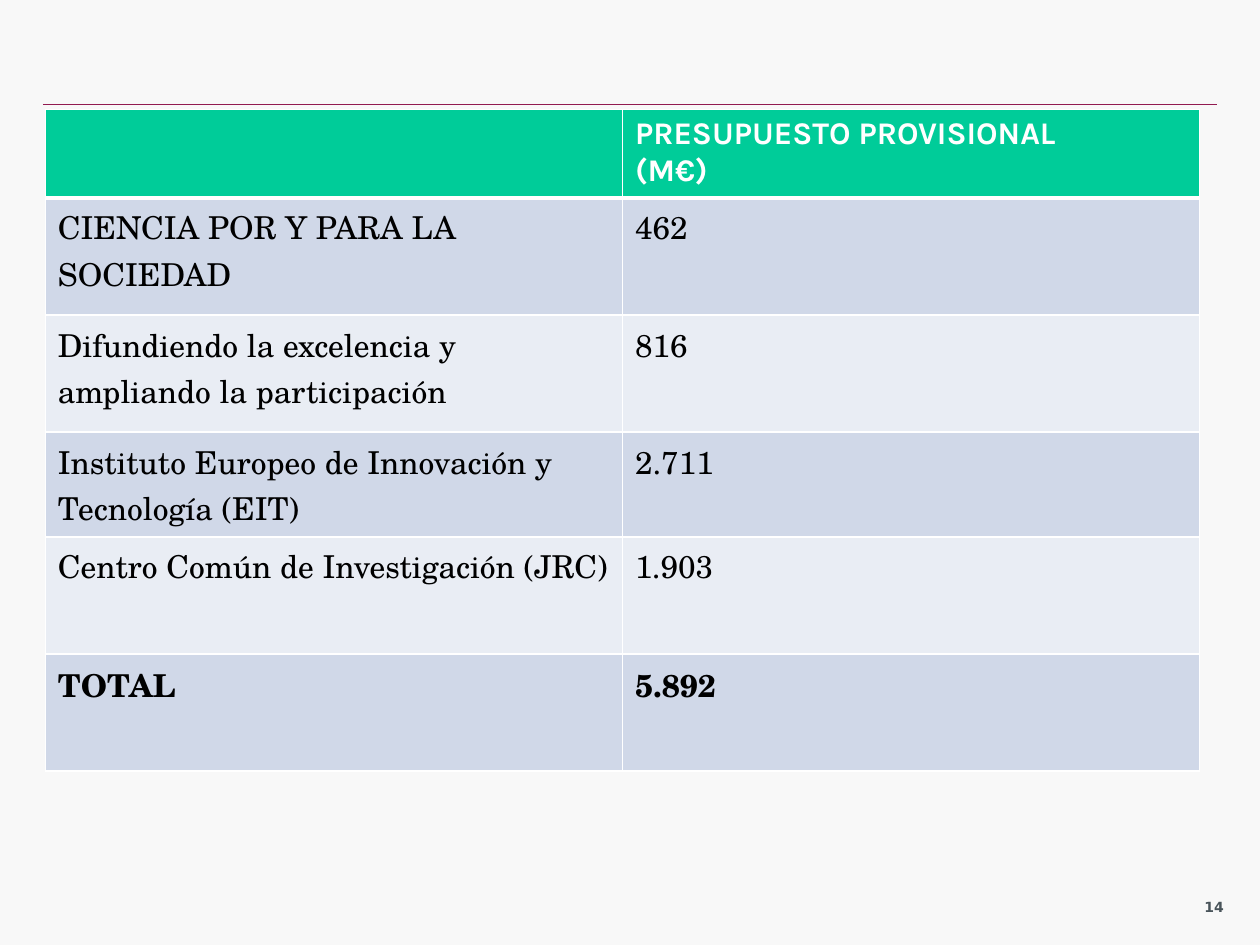
from lxml import etree
from pptx import Presentation
from pptx.dml.color import RGBColor
from pptx.enum.shapes import MSO_CONNECTOR
from pptx.enum.text import MSO_ANCHOR
from pptx.oxml.ns import qn
from pptx.util import Inches, Pt

STRAIGHT = MSO_CONNECTOR.STRAIGHT
TOP = MSO_ANCHOR.TOP
COLS, ROWS = 100, 75  # grid over the slide

HEAD = {"name": "Karla", "size": Pt(18), "bold": True}
BODY = {"name": "TeX Gyre Schola", "size": Pt(18), "bold": False}
TOTAL = {**BODY, "bold": True}
NUMBER = {"name": "DejaVu Sans", "size": Pt(8), "bold": True}

BUDGET = [
    ("", "PRESUPUESTO PROVISIONAL\n(M€)"),
    ("CIENCIA POR Y PARA LA SOCIEDAD", "462"),
    ("Difundiendo la excelencia y ampliando la participación", "816"),
    ("Instituto Europeo de Innovación y Tecnología (EIT)", "2.711"),
    ("Centro Común de Investigación (JRC)", "1.903"),
    ("TOTAL", "5.892"),
]
ROW_HEIGHTS = [6.7, 9.3, 9.3, 8.3, 9.3, 9.3]


def rgb(hex_color):
    return RGBColor.from_string(hex_color)


class Deck:
    """Holds the style and the current slide."""

    accent, head, bands, white = "921A50", "00CC99", ("D0D8E8", "E9EDF4"), "FFFFFF"
    ink, muted, paper = "000000", "49545A", "F8F8F8"

    def __init__(self):
        self.prs = Presentation()
        self.prs.slide_width, self.prs.slide_height = Inches(10), Inches(7.5)
        self.s = self.prs.slides.add_slide(self.prs.slide_layouts[6])
        fill = self.s.background.fill
        fill.solid()
        fill.fore_color.rgb = rgb(self.paper)

    def x(self, cols):
        return int(self.prs.slide_width * cols / COLS)

    def y(self, rows):
        return int(self.prs.slide_height * rows / ROWS)

    def set_text(self, tf, text, color, style):
        for i, line in enumerate(text.split("\n")):
            p = tf.add_paragraph() if i else tf.paragraphs[0]
            font = p.font
            if line:
                r = p.add_run()
                r.text = line
                font = r.font
            for key, value in style.items():
                setattr(font, key, value)
            font.color.rgb = rgb(color)

    def rule(self, left, right, row):
        line = self.s.shapes.add_connector(
            STRAIGHT, self.x(left), self.y(row), self.x(right), self.y(row))
        line.line.color.rgb = rgb(self.accent)
        line.line.width = Pt(0.5)
        etree.SubElement(line._element.spPr, qn("a:effectLst"))

    def label(self, left, top, width, height, text, style):
        sp = self.s.shapes.add_textbox(
            self.x(left), self.y(top), self.x(width), self.y(height))
        tf = sp.text_frame
        tf.word_wrap = True
        tf.vertical_anchor = TOP
        self.set_text(tf, text, self.muted, style)

    def borders(self, cell, widths):
        tc_pr = cell._tc.get_or_add_tcPr()
        for i, (side, width) in enumerate(widths.items()):
            ln = etree.Element(qn(f"a:ln{side}"), w=str(int(Pt(width))))
            fill = etree.SubElement(ln, qn("a:solidFill"))
            etree.SubElement(fill, qn("a:srgbClr"), val=self.white)
            tc_pr.insert(i, ln)

    def table(self, left, top, width, heights, data):
        n = len(data[0])
        table = self.s.shapes.add_table(
            len(data), n, self.x(left), self.y(top),
            self.x(width), self.y(sum(heights))).table
        for col in table.columns:
            col.width = self.x(width / n)
        for i, values in enumerate(data):
            table.rows[i].height = self.y(heights[i])
            is_head = i == 0
            style = HEAD if is_head else TOTAL if i == len(data) - 1 else BODY
            for j, text in enumerate(values):
                cell = table.cell(i, j)
                cell.fill.solid()
                cell.fill.fore_color.rgb = rgb(self.head if is_head else self.bands[(i - 1) % 2])
                self.set_text(cell.text_frame, text, self.white if is_head else self.ink, style)
                # Thick line between the header and the body
                self.borders(cell, {"L": 1, "R": 1, "T": 3 if i == 1 else 1,
                                    "B": 3 if is_head else 1})


def main():
    deck = Deck()
    # Rule above the table
    deck.rule(3.4, 96.6, 8.3)
    # Slide number
    deck.label(94.6, 70.8, 4.5, 3.3, "14", NUMBER)
    # Budget table
    deck.table(3.6, 8.7, 91.6, ROW_HEIGHTS, BUDGET)
    deck.prs.save("out.pptx")


if __name__ == "__main__":
    main()
